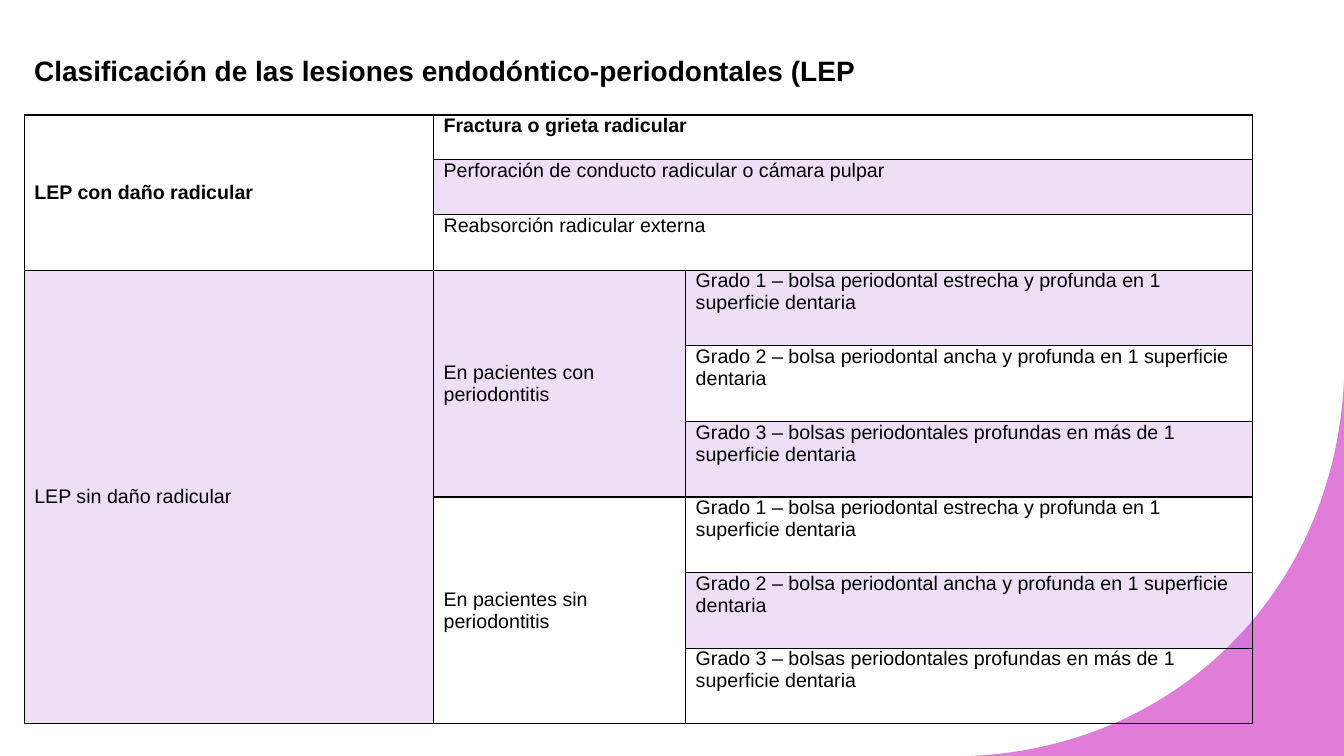
from lxml.etree import SubElement
from pptx import Presentation
from pptx.dml.color import RGBColor
from pptx.enum.text import MSO_ANCHOR
from pptx.oxml.ns import qn
from pptx.util import Inches, Pt

BLACK = RGBColor(0x00, 0x00, 0x00)
ORCHID = RGBColor(0xDF, 0x7D, 0xD9)
PURPLE = RGBColor(0xAD, 0x61, 0xD8)

COLUMN_WIDTHS = [4.06, 2.5, 5.62]
ROW_HEIGHTS = [0.44] + [0.55] * 2 + [0.75] * 6
DAMAGE_TYPES = [
    "Fractura o grieta radicular",
    "Perforación de conducto radicular o cámara pulpar",
    "Reabsorción radicular externa",
]
PATIENT_GROUPS = ["En pacientes con", "En pacientes sin"]
GRADES = [
    "Grado 1 – bolsa periodontal estrecha y profunda en 1 superficie dentaria",
    "Grado 2 – bolsa periodontal ancha y profunda en 1 superficie dentaria",
    "Grado 3 – bolsas periodontales profundas en más de 1 superficie dentaria",
]


def curve_points(start, first, second, end, steps=60):
    for step in range(steps + 1):
        t = step / steps
        weights = ((1 - t) ** 3, 3 * t * (1 - t) ** 2, 3 * t * t * (1 - t), t ** 3)
        yield tuple(
            sum(weight * value for weight, value in zip(weights, values))
            for values in zip(start, first, second, end)
        )


class SlideBuilder:
    def __init__(self, page, font="Arial", color=BLACK):
        self.page = page
        self.font = font
        self.color = color

    def add_lines(self, frame, lines, size, bold=False):
        for index, line in enumerate(lines):
            para = frame.add_paragraph() if index else frame.paragraphs[0]
            span = para.add_run()
            span.text = line
            span.font.name = self.font
            span.font.size = Pt(size)
            span.font.bold = bold
            span.font.color.rgb = self.color

    def title(self, text, left, top, width, height):
        box = self.page.shapes.add_textbox(
            Inches(left), Inches(top), Inches(width), Inches(height))
        box.text_frame.word_wrap = True
        self.add_lines(box.text_frame, [text], 20, bold=True)

    def outline(self, points, color):
        corners = [(Inches(x), Inches(y)) for x, y in points]
        builder = self.page.shapes.build_freeform(*corners[0])
        builder.add_line_segments(corners[1:], close=True)
        shape = builder.convert_to_shape()
        shape.shadow.inherit = False
        shape.fill.solid()
        shape.fill.fore_color.rgb = color
        shape.line.fill.background()

    def table(self, left, top, widths, heights):
        frame = self.page.shapes.add_table(
            len(heights), len(widths), Inches(left), Inches(top),
            Inches(sum(widths)), Inches(sum(heights)))
        table = frame.table
        table.first_row = False
        table.horz_banding = False
        for column, width in zip(table.columns, widths):
            column.width = Inches(width)
        for row, height in zip(table.rows, heights):
            row.height = Inches(height)
        for cell in table.iter_cells():
            self.borders(cell)
            cell.fill.background()
            cell.margin_left = cell.margin_right = Inches(0.1)
            cell.margin_top = cell.margin_bottom = 0
        return table

    def borders(self, cell):
        properties = cell._tc.get_or_add_tcPr()
        for side in ("a:lnL", "a:lnR", "a:lnT", "a:lnB"):
            line = SubElement(properties, qn(side), w=str(Pt(1)))
            fill = SubElement(line, qn("a:solidFill"))
            SubElement(fill, qn("a:srgbClr"), val=str(self.color))

    def cell(self, table, row, column, lines, rows=1, columns=1,
             shaded=False, middle=False, bold=False):
        cell = table.cell(row, column)
        if rows * columns > 1:
            cell.merge(table.cell(row + rows - 1, column + columns - 1))
        cell.vertical_anchor = MSO_ANCHOR.MIDDLE if middle else MSO_ANCHOR.TOP
        self.add_lines(cell.text_frame, lines, 14, bold)
        if shaded:
            cell.fill.solid()
            cell.fill.fore_color.rgb = PURPLE
            color = cell._tc.tcPr.find(qn("a:solidFill")).find(qn("a:srgbClr"))
            SubElement(color, qn("a:alpha"), val="20000")


def main():
    deck = Presentation()
    deck.slide_width = Inches(13.33)
    deck.slide_height = Inches(7.5)
    slide = SlideBuilder(deck.slides.add_slide(deck.slide_layouts[6]))

    arc = curve_points((9.63, 7.5), (11.67, 7.41), (13.23, 5.87), (13.33, 3.78))
    slide.outline([*arc, (13.33, 7.5)], ORCHID)

    table = slide.table(0.24, 1.14, COLUMN_WIDTHS, ROW_HEIGHTS)
    slide.cell(table, 0, 0, ["LEP con daño radicular"], rows=3, middle=True, bold=True)
    for row, damage in enumerate(DAMAGE_TYPES):
        slide.cell(table, row, 1, [damage], columns=2, shaded=row % 2 == 1, bold=row == 0)

    slide.cell(table, 3, 0, ["LEP sin daño radicular"], rows=6, shaded=True, middle=True)
    for group, patients in enumerate(PATIENT_GROUPS):
        first = 3 + group * len(GRADES)
        slide.cell(table, first, 1, [patients, "periodontitis"], rows=len(GRADES),
                   shaded=first % 2 == 1, middle=True)
        for row, grade in enumerate(GRADES, first):
            slide.cell(table, row, 2, [grade], shaded=row % 2 == 1)

    slide.title("Clasificación de las lesiones endodóntico-periodontales (LEP",
                0.24, 0.48, 11.69, 0.44)
    deck.save("out.pptx")


if __name__ == "__main__":
    main()
